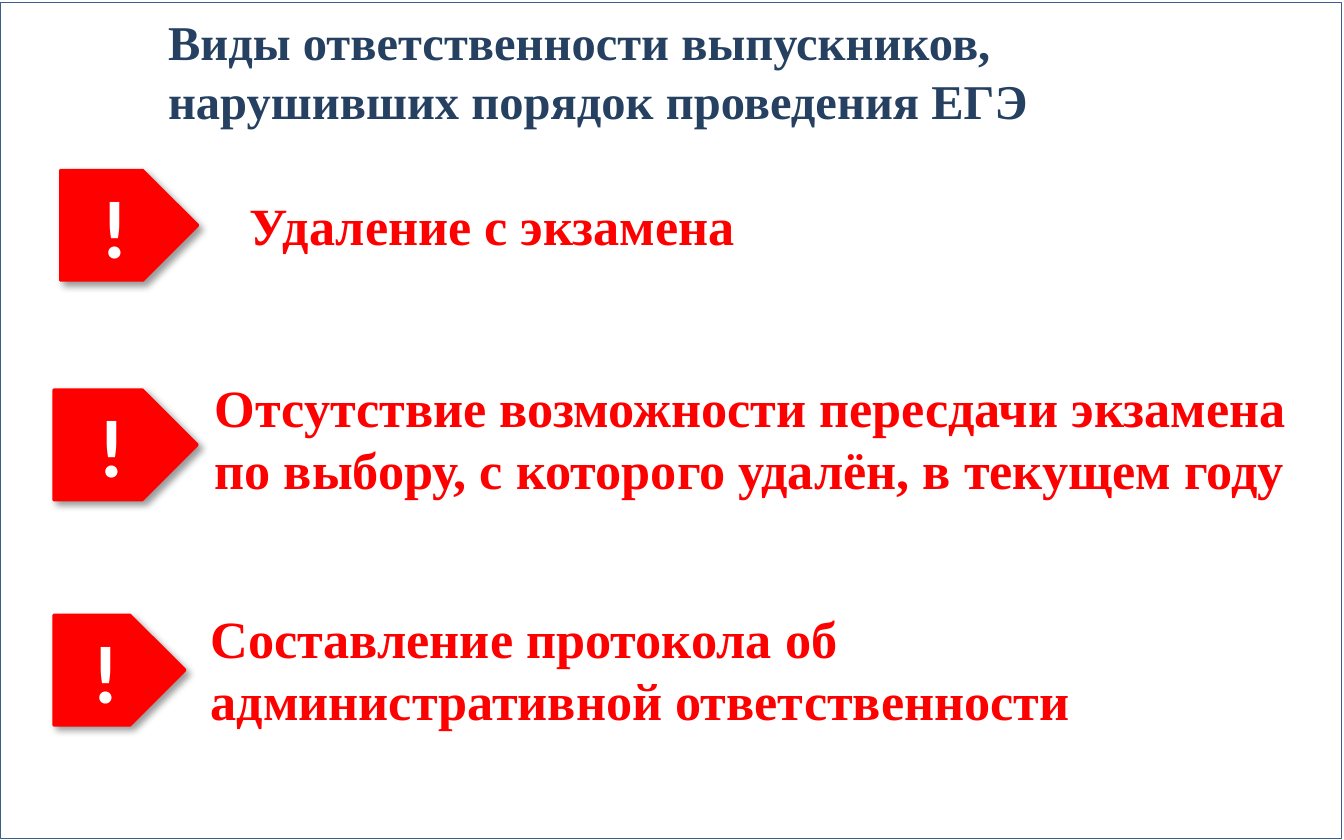
from dataclasses import dataclass

from lxml.etree import SubElement
from pptx import Presentation
from pptx.dml.color import RGBColor
from pptx.enum.shapes import MSO_SHAPE as Shape
from pptx.enum.text import MSO_ANCHOR as Anchor, PP_ALIGN as Align
from pptx.oxml.ns import qn
from pptx.util import Pt

NAVY, RED, WHITE, FRAME, BLACK = "254061", "FF0000", "FFFFFF", "3A5F8C", "000000"
SERIF, SANS = "Times New Roman", "Calibri"
MARKER_HEIGHT = 59


@dataclass
class Penalty:
    text: str
    marker_left: float
    marker_top: float
    marker_width: float
    text_left: float
    text_top: float
    text_width: float
    text_height: float
    wrap: bool = True


PENALTIES = [
    Penalty("Удаление с экзамена", 32.4, 91.2, 73.6, 126.7, 100, 277, 41, wrap=False),
    Penalty("Отсутствие возможности пересдачи экзамена по выбору, "
            "с которого удалён, в текущем году",
            28.8, 208.8, 77, 108, 197.3, 602.6, 75),
    Penalty("Составление протокола об административной ответственности",
            28.8, 329.5, 70.4, 105.8, 321.1, 589, 75),
]


def color(value: str) -> RGBColor:
    return RGBColor.from_string(value)


def style(paragraph, name: str, size: float, value: str) -> None:
    font = paragraph.font
    font.name, font.size, font.bold = name, Pt(size), True
    font.color.rgb = color(value)


def add_shadow(shape) -> None:
    """Soft black shadow falling to the lower right."""
    effects = SubElement(shape._element.spPr, qn("a:effectLst"))
    shadow = SubElement(effects, qn("a:outerShdw"), blurRad=str(Pt(4)),
                        dist=str(Pt(3)), dir=str(45 * 60000),
                        algn="tl", rotWithShape="0")
    tint = SubElement(shadow, qn("a:srgbClr"), val=BLACK)
    SubElement(tint, qn("a:alpha"), val="40000")


def add_frame(slide) -> None:
    frame = slide.shapes.add_shape(Shape.RECTANGLE, 0, Pt(1.4), Pt(718.6), Pt(447.8))
    frame.shadow.inherit = False
    frame.fill.background()
    frame.line.color.rgb = color(FRAME)
    frame.line.width = Pt(0.25)


def set_title(slide, text: str) -> None:
    title = slide.shapes.title
    title.left, title.top, title.width, title.height = Pt(87.8), Pt(0.7), Pt(578.2), Pt(74.2)
    frame = title.text_frame
    frame.margin_left = frame.margin_right = Pt(2.2)
    frame.margin_top = frame.margin_bottom = Pt(2.2)
    frame.vertical_anchor = Anchor.MIDDLE
    frame.word_wrap = True
    frame.text = text
    paragraph = frame.paragraphs[0]
    paragraph.alignment = Align.LEFT
    style(paragraph, SERIF, 26, NAVY)


def add_marker(slide, penalty: Penalty) -> None:
    marker = slide.shapes.add_shape(
        Shape.PENTAGON, Pt(penalty.marker_left), Pt(penalty.marker_top),
        Pt(penalty.marker_width), Pt(MARKER_HEIGHT))
    marker.fill.solid()
    marker.fill.fore_color.rgb = color(RED)
    marker.line.color.rgb = color(RED)
    marker.line.width = Pt(1.5)
    add_shadow(marker)
    frame = marker.text_frame
    frame.vertical_anchor = Anchor.MIDDLE
    frame.text = "!"
    paragraph = frame.paragraphs[0]
    paragraph.alignment = Align.CENTER
    style(paragraph, SANS, 44, WHITE)


def add_description(slide, penalty: Penalty) -> None:
    box = slide.shapes.add_textbox(
        Pt(penalty.text_left), Pt(penalty.text_top),
        Pt(penalty.text_width), Pt(penalty.text_height))
    frame = box.text_frame
    frame.word_wrap = penalty.wrap
    frame.text = penalty.text
    style(frame.paragraphs[0], SERIF, 28, RED)


def main() -> None:
    presentation = Presentation()
    presentation.slide_width, presentation.slide_height = Pt(720), Pt(450)
    slide = presentation.slides.add_slide(presentation.slide_layouts[5])  # title only

    # Frame and heading
    add_frame(slide)
    set_title(slide, "Виды ответственности выпускников,\vнарушивших порядок проведения ЕГЭ")

    # One marker and description per penalty
    for penalty in PENALTIES:
        add_marker(slide, penalty)
        add_description(slide, penalty)

    presentation.save("out.pptx")


if __name__ == "__main__":
    main()
